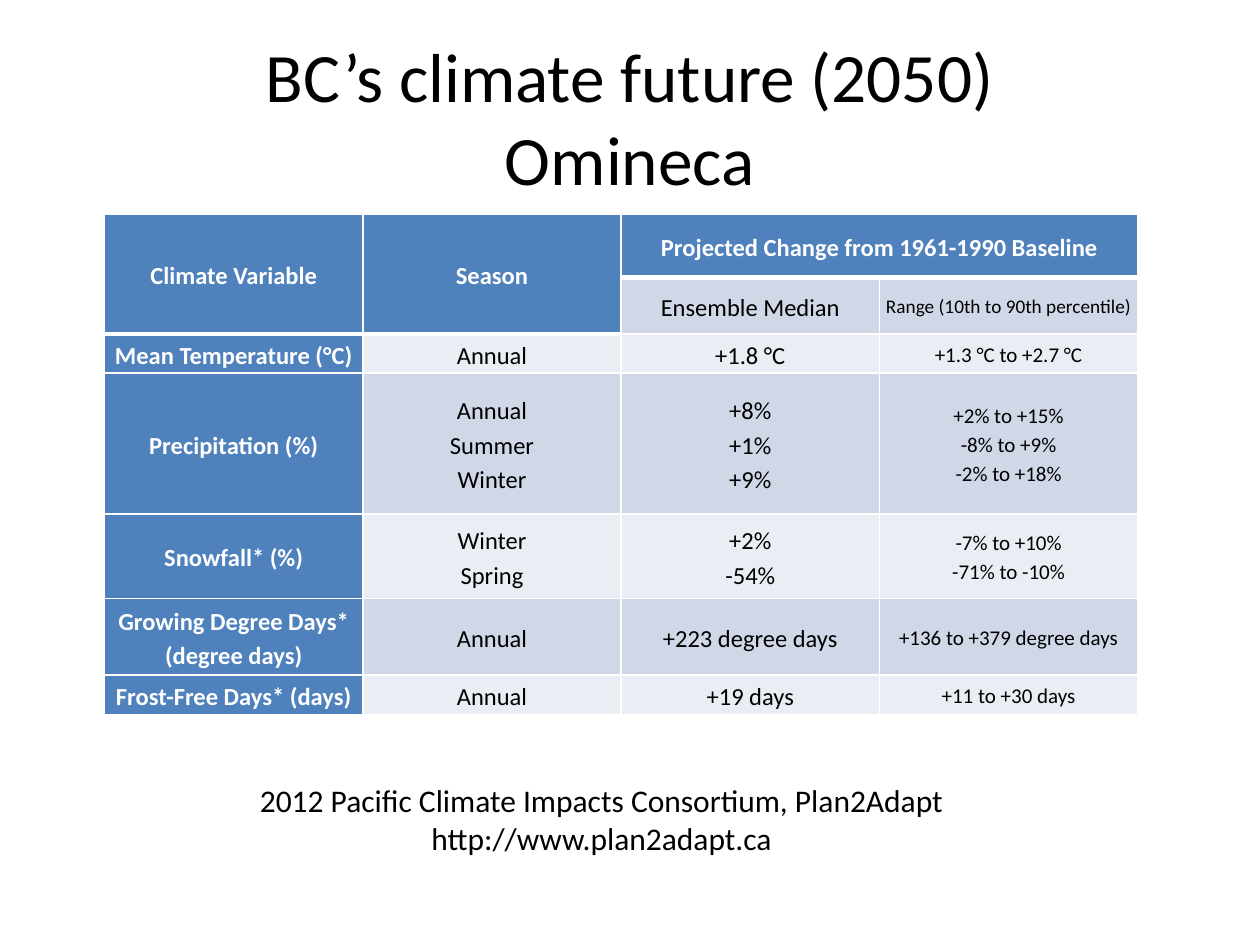
from copy import deepcopy

from lxml import etree
from pptx import Presentation, util as u
from pptx.dml.color import RGBColor
from pptx.enum import text
from pptx.oxml import ns

PX = 9144
FONT = "Calibri"
COLORS = {"header": "4F81BD", "dark": "D0D8E8", "light": "E9EDF4",
          "white": "FFFFFF", "black": "000000"}
COLUMN_WIDTH = 205
ROW_HEIGHTS = [50, 45, 31, 112, 67, 61, 31]
ROWS = [
    ["Climate Variable", "Season", "Projected Change from 1961-1990 Baseline", ""],
    ["", "", "Ensemble Median", "Range (10th to 90th percentile)"],
    ["Mean Temperature (°C)", "Annual", "+1.8 °C", "+1.3 °C to +2.7 °C"],
    ["Precipitation (%)", "Annual\nSummer\nWinter", "+8%\n+1%\n+9%",
     "+2% to +15%\n-8% to +9%\n-2% to +18%"],
    ["Snowfall* (%)", "Winter\nSpring", "+2%\n-54%", "-7% to +10%\n-71% to -10%"],
    ["Growing Degree Days* (degree days)", "Annual", "+223 degree days",
     "+136 to +379 degree days"],
    ["Frost-Free Days* (days)", "Annual", "+19 days", "+11 to +30 days"],
]
MERGES = [(0, 0, 1, 0), (0, 1, 1, 1), (0, 2, 0, 3)]
HEADER_EDGE = {(1, 0), (1, 1), (0, 2), (0, 3)}


def write(paragraph, content, size=14, color="black", bold=False, spacing=None):
    paragraph.text = content
    paragraph.alignment = text.PP_ALIGN.CENTER
    paragraph.line_spacing = spacing
    for run in paragraph.runs:
        run.font.name = FONT
        run.font.size = u.Pt(size)
        run.font.bold = bold
        run.font.color.rgb = RGBColor.from_string(COLORS[color])
    for line_break in paragraph._p.findall(ns.qn("a:br")):
        line_break.insert(0, deepcopy(paragraph.runs[0]._r.rPr))


class SlideBuilder:
    """Draws styled text and tables on the current slide."""

    def __init__(self, slide):
        self.slide = slide

    def text_box(self, box, lines, size, wrap=True, anchor=text.MSO_ANCHOR.TOP):
        shape = self.slide.shapes.add_textbox(*(value * PX for value in box))
        frame = shape.text_frame
        frame.word_wrap = wrap
        frame.vertical_anchor = anchor
        for index, line in enumerate(lines):
            paragraph = frame.add_paragraph() if index else frame.paragraphs[0]
            write(paragraph, line, size=size)

    def borders(self, cell, widths):
        properties = cell._tc.get_or_add_tcPr()
        for index, (side, width) in enumerate(widths.items()):
            line = etree.Element(ns.qn(f"a:ln{side}"), w=str(u.Pt(width)))
            fill = etree.SubElement(line, ns.qn("a:solidFill"))
            etree.SubElement(fill, ns.qn("a:srgbClr"), val=COLORS["white"])
            properties.insert(index, line)

    def cell(self, cell, content, fill, **style):
        cell.margin_left = cell.margin_right = PX
        cell.margin_top = cell.margin_bottom = PX
        cell.vertical_anchor = text.MSO_ANCHOR.MIDDLE
        cell.fill.solid()
        cell.fill.fore_color.rgb = RGBColor.from_string(COLORS[fill])
        write(cell.text_frame.paragraphs[0], content, spacing=1.15, **style)

    def table(self, left, top):
        columns = len(ROWS[0])
        table = self.slide.shapes.add_table(
            len(ROWS), columns, left * PX, top * PX,
            columns * COLUMN_WIDTH * PX, sum(ROW_HEIGHTS) * PX).table
        for column in table.columns:
            column.width = COLUMN_WIDTH * PX
        for row, height in zip(table.rows, ROW_HEIGHTS):
            row.height = height * PX
        for row, contents in enumerate(ROWS):
            for column, content in enumerate(contents):
                header = row == 0 or column == 0 or (row, column) in HEADER_EDGE
                band = "dark" if row % 2 else "light"
                size = 14 if header or column < 3 else 11 if row == 1 else 12
                cell = table.cell(row, column)
                self.cell(cell, content, "header" if header else band, size=size,
                          color="white" if header else "black", bold=header)
                self.borders(cell, {
                    "L": 1, "R": 1,
                    "T": 3 if (row - 1, column) in HEADER_EDGE else 1,
                    "B": 3 if (row, column) in HEADER_EDGE or row + column < 2 else 1})
        for top_row, first, bottom_row, last in MERGES:
            table.cell(top_row, first).merge(table.cell(bottom_row, last))


def main():
    presentation = Presentation()
    presentation.slide_width = 1000 * PX
    presentation.slide_height = 750 * PX
    builder = SlideBuilder(presentation.slides.add_slide(presentation.slide_layouts[6]))
    builder.table(83, 170)
    builder.text_box((193, 615, 569, 71),
                     ["2012 Pacific Climate Impacts Consortium, Plan2Adapt",
                      "http://www.plan2adapt.ca"], size=18, wrap=False)
    builder.text_box((50, 30, 900, 125), ["BC’s climate future (2050)\nOmineca"],
                     size=39.6, anchor=text.MSO_ANCHOR.MIDDLE)
    presentation.save("out.pptx")


if __name__ == "__main__":
    main()
